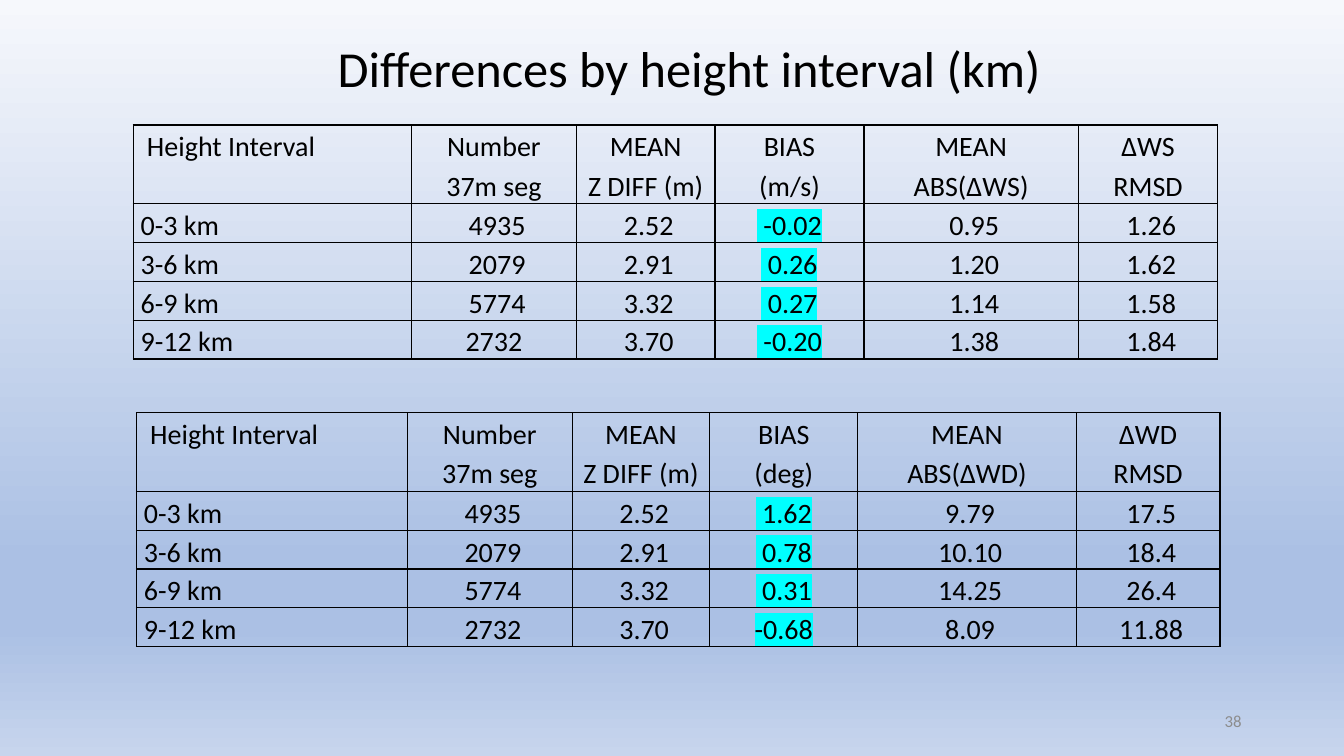
from dataclasses import dataclass

from lxml.etree import SubElement
from pptx import Presentation
from pptx.dml.color import RGBColor
from pptx.enum.text import MSO_ANCHOR, MSO_AUTO_SIZE, PP_ALIGN
from pptx.oxml import parse_xml
from pptx.oxml.ns import nsdecls, qn
from pptx.slide import Slide
from pptx.util import Emu, Pt

EMU_PER_PX = 9525
FONT = "Calibri"
COLORS = {
    "text": "000000",
    "border": "000000",
    "number": "8C8C8C",
    "highlight": "00FFFF",
}
BACKGROUND_STOPS = [(0, "F6F8FC"), (74, "ABC0E4"), (83, "ABC0E4"), (100, "C7D5ED")]
HEADER_HEIGHT = 75
ROW_HEIGHT = 37
CELL_MARGIN = 7
BIAS_COLUMN = 3


@dataclass
class IntervalTable:
    left: int
    top: int
    column_widths: list[int]
    unit: str
    symbol: str
    rows: list[list[str]]

    def lines(self) -> list[list[str]]:
        header = [
            " Height Interval",
            "Number\n37m seg",
            "MEAN\nZ DIFF (m)",
            f"BIAS\n({self.unit})",
            f"MEAN\nABS({self.symbol})",
            f"{self.symbol}\nRMSD",
        ]
        return [header, *self.rows]


TABLES = [
    IntervalTable(127, 119, [265, 157, 132, 142, 204, 133], "m/s", "ΔWS", [
        ["0-3 km ", " 4935", " 2.52", " -0.02", " 0.95", " 1.26"],
        ["3-6 km ", " 2079", " 2.91", " 0.26", " 1.20", " 1.62"],
        ["6-9 km ", " 5774", " 3.32", " 0.27", " 1.14", " 1.58"],
        ["9-12 km ", "2732", " 3.70", " -0.20", " 1.38", " 1.84"],
    ]),
    IntervalTable(130, 393, [258, 157, 131, 141, 208, 137], "deg", "ΔWD", [
        ["0-3 km ", " 4935", " 2.52", " 1.62", " 9.79", " 17.5"],
        ["3-6 km ", " 2079", " 2.91", " 0.78", " 10.10", " 18.4"],
        ["6-9 km ", " 5774", " 3.32", " 0.31", " 14.25", " 26.4"],
        ["9-12 km ", " 2732", " 3.70", "-0.68", " 8.09", " 11.88"],
    ]),
]


def px(value: int) -> Emu:
    return Emu(value * EMU_PER_PX)


def format_paragraph(paragraph, size: int, color: str, alignment: PP_ALIGN) -> None:
    paragraph.alignment = alignment
    paragraph.font.name = FONT
    paragraph.font.size = Pt(size)
    paragraph.font.color.rgb = RGBColor.from_string(COLORS[color])


def paint_background(slide: Slide) -> None:
    fill = slide.background.fill
    fill.gradient()
    fill.gradient_angle = 270
    stop_list = next(slide.element.iter(qn("a:gsLst")))
    for stop in list(stop_list):
        stop_list.remove(stop)
    for position, color in BACKGROUND_STOPS:
        stop = SubElement(stop_list, qn("a:gs"), pos=str(position * 1000))
        SubElement(stop, qn("a:srgbClr"), val=color)


def add_borders(cell) -> None:
    properties = cell._tc.get_or_add_tcPr()
    for index, side in enumerate("LRTB"):
        properties.insert(index, parse_xml(
            f'<a:ln{side} {nsdecls("a")} w="{Pt(1)}"><a:solidFill>'
            f'<a:srgbClr val="{COLORS["border"]}"/></a:solidFill></a:ln{side}>'
        ))


def highlight(run) -> None:
    mark = SubElement(run._r.get_or_add_rPr(), qn("a:highlight"))
    SubElement(mark, qn("a:srgbClr"), val=COLORS["highlight"])


def fill_cell(cell, text: str, alignment: PP_ALIGN, highlighted: bool) -> None:
    cell.fill.background()
    add_borders(cell)
    cell.margin_left = cell.margin_right = px(CELL_MARGIN)
    cell.margin_top = cell.margin_bottom = 0
    cell.text_frame.text = text
    for paragraph in cell.text_frame.paragraphs:
        format_paragraph(paragraph, 20, "text", alignment)
        paragraph.line_spacing = 1.15
        if highlighted:
            highlight(paragraph.runs[0])


def add_interval_table(slide: Slide, data: IntervalTable) -> None:
    lines = data.lines()
    heights = [HEADER_HEIGHT] + [ROW_HEIGHT] * len(data.rows)
    table = slide.shapes.add_table(
        len(lines), len(data.column_widths), px(data.left), px(data.top),
        px(sum(data.column_widths)), px(sum(heights)),
    ).table
    table.first_row = False
    table.horz_banding = False
    for column, width in zip(table.columns, data.column_widths):
        column.width = px(width)
    for row, height in zip(table.rows, heights):
        row.height = px(height)
    for row_index, line in enumerate(lines):
        for column_index, text in enumerate(line):
            alignment = PP_ALIGN.CENTER if column_index else PP_ALIGN.LEFT
            highlighted = row_index > 0 and column_index == BIAS_COLUMN
            fill_cell(table.cell(row_index, column_index), text, alignment, highlighted)


def add_title(slide: Slide, text: str) -> None:
    title = slide.shapes.title
    title.left, title.top, title.width, title.height = px(312), px(30), px(696), px(68)
    frame = title.text_frame
    frame.text = text
    frame.word_wrap = False
    frame.auto_size = MSO_AUTO_SIZE.SHAPE_TO_FIT_TEXT
    frame.vertical_anchor = MSO_ANCHOR.MIDDLE
    format_paragraph(frame.paragraphs[0], 36, "text", PP_ALIGN.LEFT)


def add_slide_number(slide: Slide, text: str) -> None:
    frame = slide.shapes.add_textbox(px(904), px(667), px(288), px(38)).text_frame
    frame.text = text
    frame.word_wrap = True
    frame.vertical_anchor = MSO_ANCHOR.MIDDLE
    format_paragraph(frame.paragraphs[0], 12, "number", PP_ALIGN.RIGHT)


def main() -> None:
    presentation = Presentation()
    presentation.slide_width = px(1280)
    presentation.slide_height = px(720)
    slide = presentation.slides.add_slide(presentation.slide_layouts.get_by_name("Title Only"))
    paint_background(slide)
    add_title(slide, "Differences by height interval (km)")
    for data in TABLES:
        add_interval_table(slide, data)
    add_slide_number(slide, "38")
    presentation.save("out.pptx")


if __name__ == "__main__":
    main()
